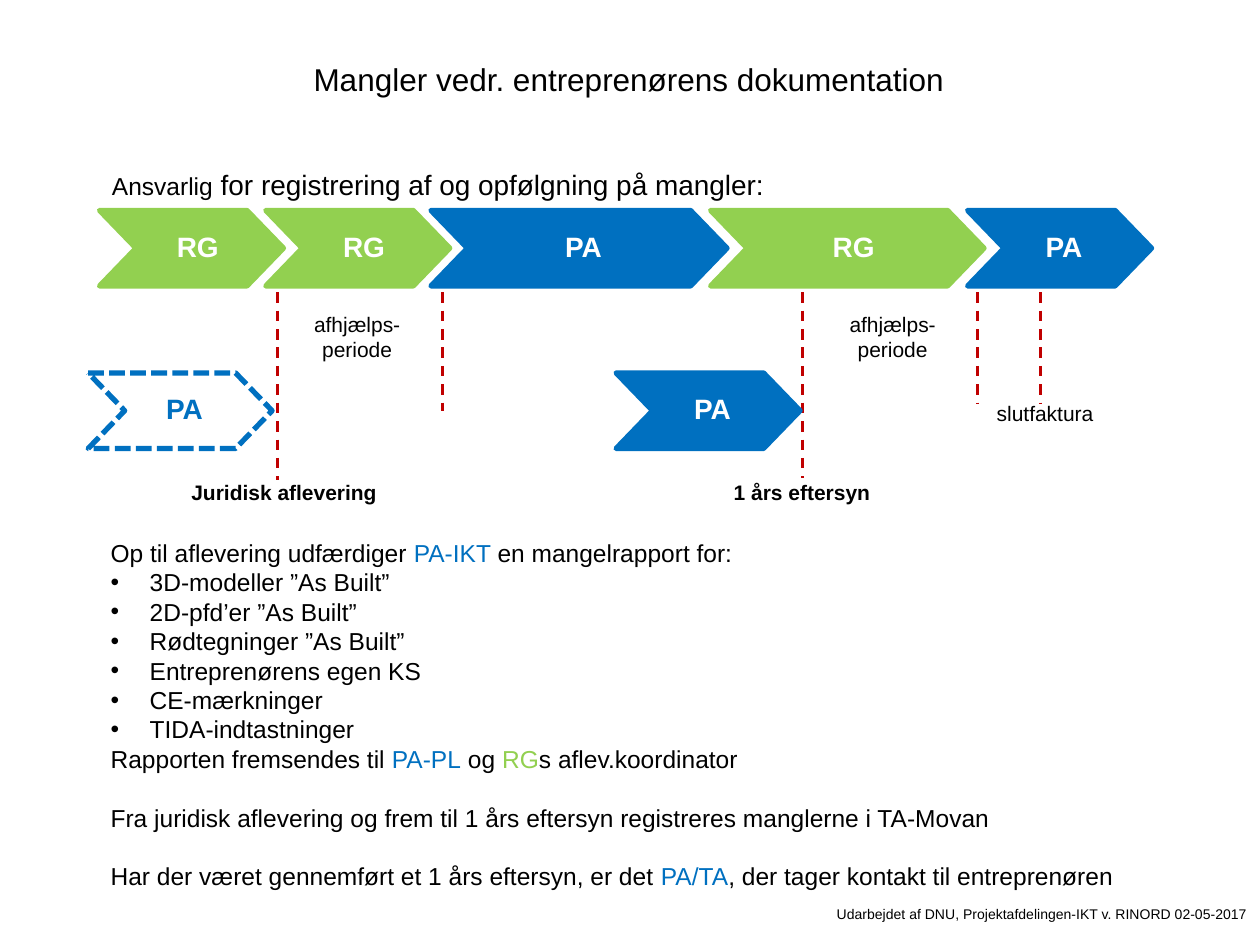
from lxml import etree
from pptx import Presentation
from pptx.dml.color import RGBColor
from pptx.enum.dml import MSO_LINE_DASH_STYLE as DASH
from pptx.enum.shapes import MSO_CONNECTOR
from pptx.enum.text import MSO_ANCHOR as ANCHOR, PP_ALIGN as ALIGN
from pptx.oxml.ns import qn
from pptx.util import Inches, Pt

BLACK = RGBColor(0x00, 0x00, 0x00)
WHITE = RGBColor(0xFF, 0xFF, 0xFF)
BLUE = RGBColor(0x00, 0x70, 0xC0)
GREEN = RGBColor(0x92, 0xD0, 0x50)
RED = RGBColor(0xC0, 0x00, 0x00)

TITLE = "Mangler vedr. entreprenørens dokumentation"
HEADING = [[("Ansvarlig", {}),
            (" for registrering af og opfølgning på mangler:", {"size": 16})]]
FOOTER = "Udarbejdet af DNU, Projektafdelingen-IKT v. RINORD 02-05-2017"
INTRO = [[("Op til aflevering udfærdiger ", {}), ("PA-IKT ", {"color": BLUE}),
          ("en mangelrapport for:", {})]]
REPORT_ITEMS = ["3D-modeller ”As Built”", "2D-pfd’er ”As Built”",
                "Rødtegninger ”As Built”", "Entreprenørens egen KS",
                "CE-mærkninger", "TIDA-indtastninger"]
RECIPIENTS = [("Rapporten fremsendes til ", {}), ("PA-PL", {"color": BLUE}),
              (" og ", {}), ("RG", {"color": GREEN}), ("s aflev.koordinator", {})]
FOLLOW_UP = [
    "Fra juridisk aflevering og frem til 1 års eftersyn registreres manglerne i TA-Movan",
    [("Har der været gennemført et 1 års eftersyn, er det ", {}),
     ("PA/TA", {"color": BLUE}), (", der tager kontakt til entreprenøren", {})],
]

PHASE_TOP, CHECK_TOP = 1.67, 2.96
SHORT = 1.46
CHEVRONS = [
    ("RG", 0.79, PHASE_TOP, SHORT, False),
    ("RG", 2.11, PHASE_TOP, SHORT, False),
    ("PA", 3.42, PHASE_TOP, 2.35, False),
    ("RG", 5.64, PHASE_TOP, 2.17, False),
    ("PA", 7.68, PHASE_TOP, SHORT, False),
    ("PA", 0.7, CHECK_TOP, SHORT, True),
    ("PA", 4.89, CHECK_TOP, SHORT, False),
]
PARTIES = {"RG": (GREEN, (0.47, 0.05, 0.37, 0.05)),
           "PA": (BLUE, (0.35, 0.04, 0.28, 0.04))}
CHEVRON_HEIGHT, POINT = 0.6, 0.29

MILESTONE_TOP = 2.32
MILESTONES = [(2.2, 3.81), (3.51, 3.26), (6.37, 3.79), (7.76, 3.2), (8.26, 3.2)]

LABEL_WIDTH = 1.97
LABELS = [
    (["Juridisk aflevering"], 1.27, 3.76, True),
    (["afhjælps-", "periode"], 1.85, 2.42, False),
    (["1 års eftersyn"], 5.38, 3.76, True),
    (["afhjælps-", "periode"], 6.1, 2.42, False),
    (["slutfaktura"], 7.31, 3.13, False),
]


def write(tf, paragraphs, size=14, color=BLACK, bold=False, align=ALIGN.LEFT,
          anchor=ANCHOR.TOP, insets=(0.1, 0.05, 0.1, 0.05), wrap=True,
          bullet=False, before=0, line=None, append=False):
    tf.word_wrap = wrap
    tf.vertical_anchor = anchor
    tf.margin_left, tf.margin_top, tf.margin_right, tf.margin_bottom = map(Inches, insets)
    for i, runs in enumerate(paragraphs):
        p = tf.add_paragraph() if append or i else tf.paragraphs[0]
        if bullet:
            pPr = p._p.get_or_add_pPr()
            pPr.set("marL", str(Inches(0.31)))
            pPr.set("indent", str(-Inches(0.31)))
            etree.SubElement(pPr, qn("a:buFont"), typeface="Arial")
            etree.SubElement(pPr, qn("a:buChar"), char="•")
        p.alignment = align
        if before:
            p.space_before = Pt(before)
        if line:
            p.line_spacing = line
        for text, fmt in [(runs, {})] if isinstance(runs, str) else runs:
            r = p.add_run()
            r.text = text
            r.font.name = "Arial"
            r.font.size = Pt(fmt.get("size", size))
            r.font.bold = bold
            r.font.color.rgb = fmt.get("color", color)


def add_text(slide, box, paragraphs, **fmt):
    tf = slide.shapes.add_textbox(*map(Inches, box)).text_frame
    write(tf, paragraphs, **fmt)
    return tf


def add_chevron(slide, party, x, y, width, planned):
    color, insets = PARTIES[party]
    right, middle, bottom = x + width, y + CHEVRON_HEIGHT / 2, y + CHEVRON_HEIGHT
    points = [(right - POINT, y), (right, middle), (right - POINT, bottom),
              (x, bottom), (x + POINT, middle)]
    builder = slide.shapes.build_freeform(Inches(x), Inches(y))
    builder.add_line_segments([(Inches(a), Inches(b)) for a, b in points], close=True)
    sp = builder.convert_to_shape()
    sp.shadow.inherit = False
    sp.fill.solid()
    sp.fill.fore_color.rgb = WHITE if planned else color
    sp.line.color.rgb = color
    sp.line.width = Pt(3)
    if planned:
        sp.line.dash_style = DASH.SQUARE_DOT
    write(sp.text_frame, [party], size=16, color=color if planned else WHITE,
          bold=True, align=ALIGN.CENTER, anchor=ANCHOR.MIDDLE, insets=insets, line=0.9)


def add_milestone(slide, x, bottom):
    line = slide.shapes.add_connector(MSO_CONNECTOR.STRAIGHT, Inches(x),
                                      Inches(MILESTONE_TOP), Inches(x), Inches(bottom))
    line.line.color.rgb = RED
    line.line.width = Pt(1.5)
    line.line.dash_style = DASH.DASH
    etree.SubElement(line._element.spPr, qn("a:effectLst"))


def main():
    prs = Presentation()
    prs.slide_width, prs.slide_height = Inches(10), Inches(7.5)
    slide = prs.slides.add_slide(prs.slide_layouts[5])

    title = slide.shapes.title
    title.left, title.top, title.width, title.height = map(Inches, (0.49, 0, 9, 1.25))
    write(title.text_frame, [TITLE], size=18, align=ALIGN.CENTER, anchor=ANCHOR.MIDDLE)

    body = add_text(slide, (0.78, 4.22, 8.44, 2.93), INTRO)
    write(body, REPORT_ITEMS, bullet=True, append=True)
    write(body, [RECIPIENTS], append=True)
    write(body, FOLLOW_UP, before=16.8, append=True)

    for milestone in MILESTONES:
        add_milestone(slide, *milestone)
    for lines, x, y, bold in LABELS:
        add_text(slide, (x, y, LABEL_WIDTH, 0.2 * len(lines) + 0.1), lines,
                 size=12, bold=bold, align=ALIGN.CENTER)
    for chevron in CHEVRONS:
        add_chevron(slide, *chevron)

    add_text(slide, (0.79, 1.28, 6.29, 0.37), HEADING)
    add_text(slide, (3.9, 7.14, 6.1, 0.36), [FOOTER], size=8, align=ALIGN.RIGHT, wrap=False)
    prs.save("out.pptx")


if __name__ == "__main__":
    main()
